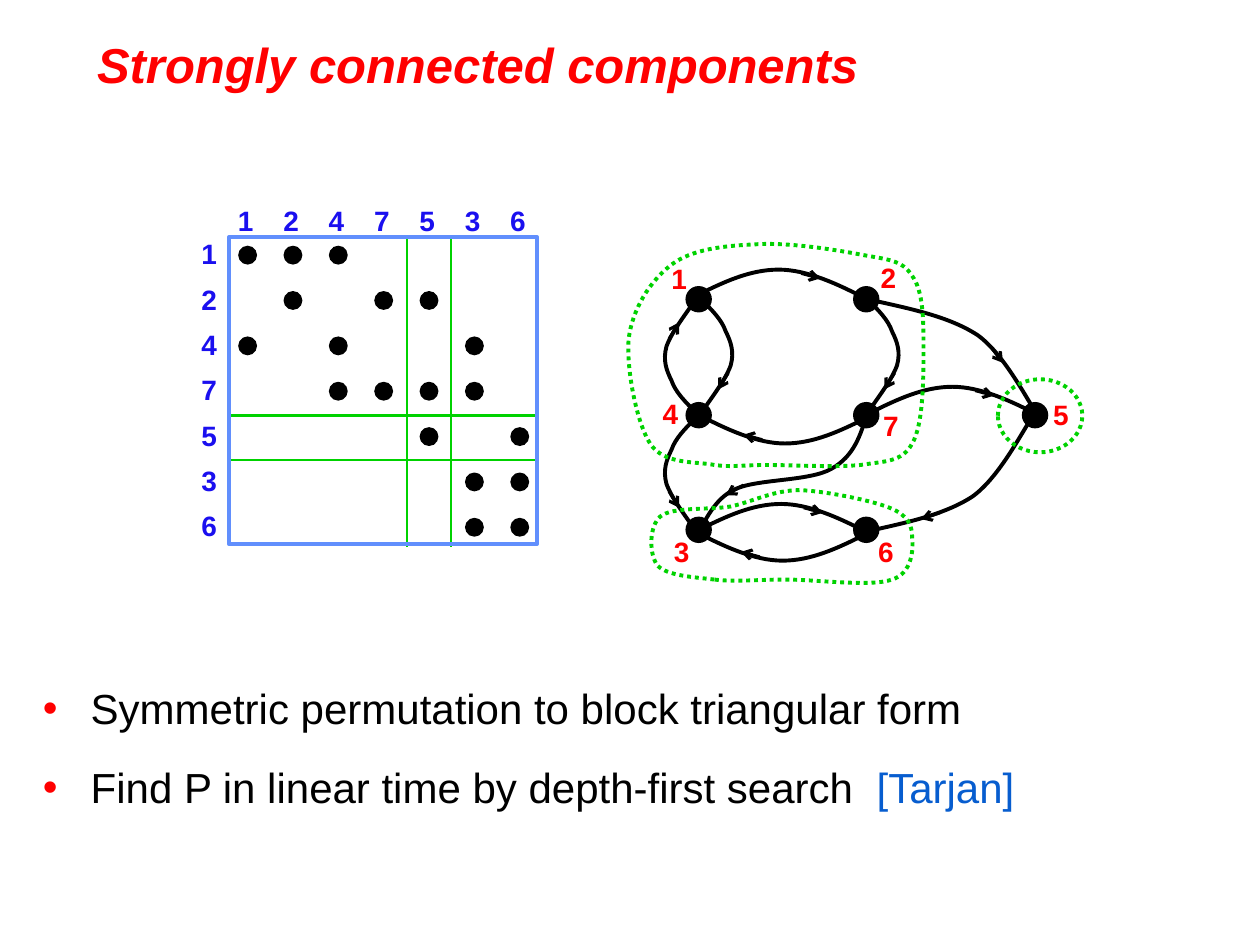
import pptx
import pptx.util
import pptx.dml.color
import pptx.enum.dml
import pptx.enum.shapes
import pptx.enum.text
import pptx.oxml.ns
import lxml.etree

PX = 9144  # EMU in one px, 100 px to the inch
BLACK, RED, BLUE, GREEN = "000000", "FF0000", "1A0FEF", "00D200"
OVAL = pptx.enum.shapes.MSO_SHAPE.OVAL
RECT = pptx.enum.shapes.MSO_SHAPE.RECTANGLE
LEFT = pptx.enum.text.PP_ALIGN.LEFT
RIGHT = pptx.enum.text.PP_ALIGN.RIGHT


def color(text):
    return pptx.dml.color.RGBColor.from_string(text)


def add_tag(parent, name, **attrs):
    return lxml.etree.SubElement(parent, pptx.oxml.ns.qn(name), attrs)


class Pen:
    font = "Arial"

    def __init__(self, slide):
        self.slide = slide
        self.shapes = slide.shapes

    def place(self, shape, left, top, width, height):
        shape.left, shape.top = left * PX, top * PX
        shape.width, shape.height = width * PX, height * PX

    def style(self, run, size, tone, bold=False, slant=False):
        font = run.font
        font.name, font.size = self.font, pptx.util.Pt(size)
        font.bold, font.italic = bold, slant
        font.color.rgb = color(tone)

    def stroke(self, shape, tone, width, dots=False):
        shape.line.color.rgb = color(tone)
        shape.line.width = pptx.util.Pt(width)
        if dots:
            shape.line.dash_style = pptx.enum.dml.MSO_LINE.ROUND_DOT

    def title(self, text, *box):
        shape = self.shapes.title
        self.place(shape, *box)
        frame = shape.text_frame
        frame.text = text
        frame.auto_size = pptx.enum.text.MSO_AUTO_SIZE.NONE
        frame.vertical_anchor = pptx.enum.text.MSO_ANCHOR.MIDDLE
        frame.paragraphs[0].alignment = LEFT
        self.style(frame.paragraphs[0].runs[0], 28, RED, True, True)

    def bullets(self, items, *box):
        """Each item is a list of (text, color) parts."""
        shape = self.slide.placeholders[1]
        self.place(shape, *box)
        frame = shape.text_frame
        frame.auto_size = pptx.enum.text.MSO_AUTO_SIZE.NONE
        frame.text = "\n".join(parts[0][0] for parts in items)
        for para, parts in zip(frame.paragraphs, items):
            para.line_spacing = 1.4
            para.space_before = pptx.util.Pt(4.8)
            for text, tone in parts[1:]:
                para.add_run().text = text
            for run, (text, tone) in zip(para.runs, parts):
                self.style(run, 24, tone)
            props = para._p.get_or_add_pPr()
            props.set("marL", str(38 * PX))
            props.set("indent", str(-38 * PX))
            add_tag(add_tag(props, "a:buClr"), "a:srgbClr", val=RED)
            add_tag(props, "a:buChar", char="•")

    def label(self, text, left, top, tone, align=LEFT):
        box = self.shapes.add_textbox(left * PX, top * PX, 32 * PX, 37 * PX)
        frame = box.text_frame
        frame.text = text
        frame.word_wrap = False
        frame.auto_size = pptx.enum.text.MSO_AUTO_SIZE.SHAPE_TO_FIT_TEXT
        frame.paragraphs[0].alignment = align
        self.style(frame.paragraphs[0].runs[0], 16, tone, True)

    def dot(self, left, top, size):
        shape = self.shapes.add_shape(OVAL, left * PX, top * PX, size * PX, size * PX)
        shape.shadow.inherit = False
        shape.fill.solid()
        shape.fill.fore_color.rgb = color(BLACK)
        shape.line.fill.background()

    def frame(self, kind, left, top, width, height, tone, dots=False):
        shape = self.shapes.add_shape(kind, left * PX, top * PX, width * PX, height * PX)
        shape.shadow.inherit = False
        shape.fill.background()
        self.stroke(shape, tone, 2.25, dots)

    def line(self, start, end, tone, width, head=False):
        kind = pptx.enum.shapes.MSO_CONNECTOR.STRAIGHT
        shape = self.shapes.add_connector(kind, *[n * PX for n in (*start, *end)])
        self.stroke(shape, tone, width)
        if head:
            add_tag(shape.line._get_or_add_ln(), "a:tailEnd", type="arrow")
        add_tag(shape._element.spPr, "a:effectLst")

    def curve(self, points, tone, close=False, dots=False):
        """Draw a Bezier chain: a start, then three points for each part."""
        chain = self.shapes.build_freeform(*points[0], scale=PX)
        chain.add_line_segments(points[1:], close=close)
        shape = chain.convert_to_shape()
        shape.shadow.inherit = False
        shape.fill.background()
        self.stroke(shape, tone, 2.25, dots)
        steps = list(shape._element.iter(pptx.oxml.ns.qn("a:lnTo")))
        for i in range(0, len(steps), 3):
            bend = lxml.etree.Element(pptx.oxml.ns.qn("a:cubicBezTo"))
            steps[i].addprevious(bend)
            for step in steps[i:i + 3]:
                bend.append(step[0])
                step.getparent().remove(step)

    def edge(self, start, points, head, flip=(1, 1)):
        """Draw an edge and its head from offsets, mirrored by flip."""
        def move(point):
            return tuple(s + f * p for s, f, p in zip(start, flip, point))
        self.line(move(head[0]), move(head[1]), BLACK, 1.75, True)
        self.curve([move(p) for p in [(0, 0)] + points], BLACK)


def draw_matrix(pen):
    order, step = "1247536", 36
    rows = ["124", "275", "143", "4753", "56", "36", "36"]
    # Block borders
    for y in (330, 365):
        pen.line((182, y), (427, y), GREEN, 1.5)
    for x in (323, 358):
        pen.line((x, 188), (x, 434), GREEN, 1.5)
    pen.frame(RECT, 182, 188, 244, 244, "618FFD")
    # Nonzeros and row and column names
    for i, (name, cols) in enumerate(zip(order, rows)):
        pen.label(name, 179 + i * step, 157, BLUE)
        pen.label(name, 150, 183 + i * step, BLUE, RIGHT)
        for col in cols:
            pen.dot(189 + order.index(col) * step, 195 + i * step, 15)


def draw_graph(pen):
    # Nodes: dot, then label
    nodes = {"1": (544, 227, 523, 203), "2": (677, 227, 689, 202),
             "3": (544, 410, 525, 419), "4": (544, 319, 516, 310),
             "5": (811, 319, 826, 311), "6": (677, 410, 687, 419),
             "7": (677, 319, 691, 319)}
    for name, (x, y, left, top) in nodes.items():
        pen.dot(x, y, 21)
        pen.label(name, left, top, RED)

    # Flat arcs run across, tall arcs run up or down
    flat = [(22, -11), (43, -21), (66, -21), (88, -21), (112, -10), (135, 2)]
    for start, flip in [((552, 235), (1, 1)), ((690, 328), (1, 1)), ((554, 421), (1, 1)),
                        ((687, 424), (-1, -1)), ((689, 331), (-1, -1))]:
        pen.edge(start, flat, [(84, -18), (99, -14)], flip)
    tall = [(8, 8), (16, 16), (19, 25), (23, 33), (26, 41), (23, 52),
            (19, 63), (9, 76), (0, 89)]
    for start, flip in [((552, 327), (-1, -1)), ((552, 332), (-1, 1)),
                        ((557, 238), (1, 1)), ((689, 238), (1, 1))]:
        pen.edge(start, tall, [(21, 58), (13, 71)], flip)

    # Long edges: 7 to 3, 5 to 6, 2 to 5
    pen.edge((555, 420), [(5, -5), (11, -24), (29, -32), (47, -40), (88, -38),
                          (105, -48), (123, -58), (128, -75), (133, -91)],
             [(35, -35), (21, -27)])
    long = [(-8, 11), (-26, 48), (-48, 64), (-71, 79), (-102, 85), (-133, 92)]
    pen.edge((820, 330), long, [(-74, 77), (-89, 82)])
    pen.edge((824, 330), long, [(-37, 54), (-28, 42)], (1, -1))

    # Component outlines
    pen.curve([(567, 369), (552, 366), (527, 369), (516, 352), (505, 335), (497, 292),
               (499, 269), (502, 245), (516, 223), (533, 210), (549, 198), (574, 195),
               (599, 194), (624, 192), (662, 198), (683, 202), (704, 206), (716, 206),
               (724, 219), (733, 231), (733, 255), (733, 277), (733, 299), (733, 337),
               (724, 352), (716, 367), (702, 366), (683, 369), (663, 371), (627, 369),
               (608, 369), (589, 369), (582, 371), (567, 369)], GREEN, True, True)
    pen.curve([(567, 460), (550, 458), (530, 457), (522, 449), (515, 440), (515, 418),
               (524, 410), (534, 402), (561, 405), (580, 402), (598, 398), (614, 389),
               (635, 389), (656, 390), (691, 397), (706, 403), (721, 409), (724, 417),
               (724, 427), (725, 436), (724, 455), (708, 460), (691, 466), (648, 460),
               (624, 460), (601, 460), (584, 462), (567, 460)], GREEN, True, True)
    pen.frame(OVAL, 792, 301, 67, 58, GREEN, True)


def main():
    deck = pptx.Presentation()
    deck.slide_width, deck.slide_height = 1000 * PX, 750 * PX
    pen = Pen(deck.slides.add_slide(deck.slide_layouts[1]))
    pen.title("Strongly connected components", 67, 17, 819, 67)
    pen.bullets([[("Symmetric permutation to block triangular form", BLACK)],
                 [("Find P in linear time by depth-first search  ", BLACK),
                  ("[Tarjan]", "075DCF")]], 24, 521, 900, 177)
    draw_matrix(pen)
    draw_graph(pen)
    deck.save("out.pptx")


if __name__ == "__main__":
    main()
